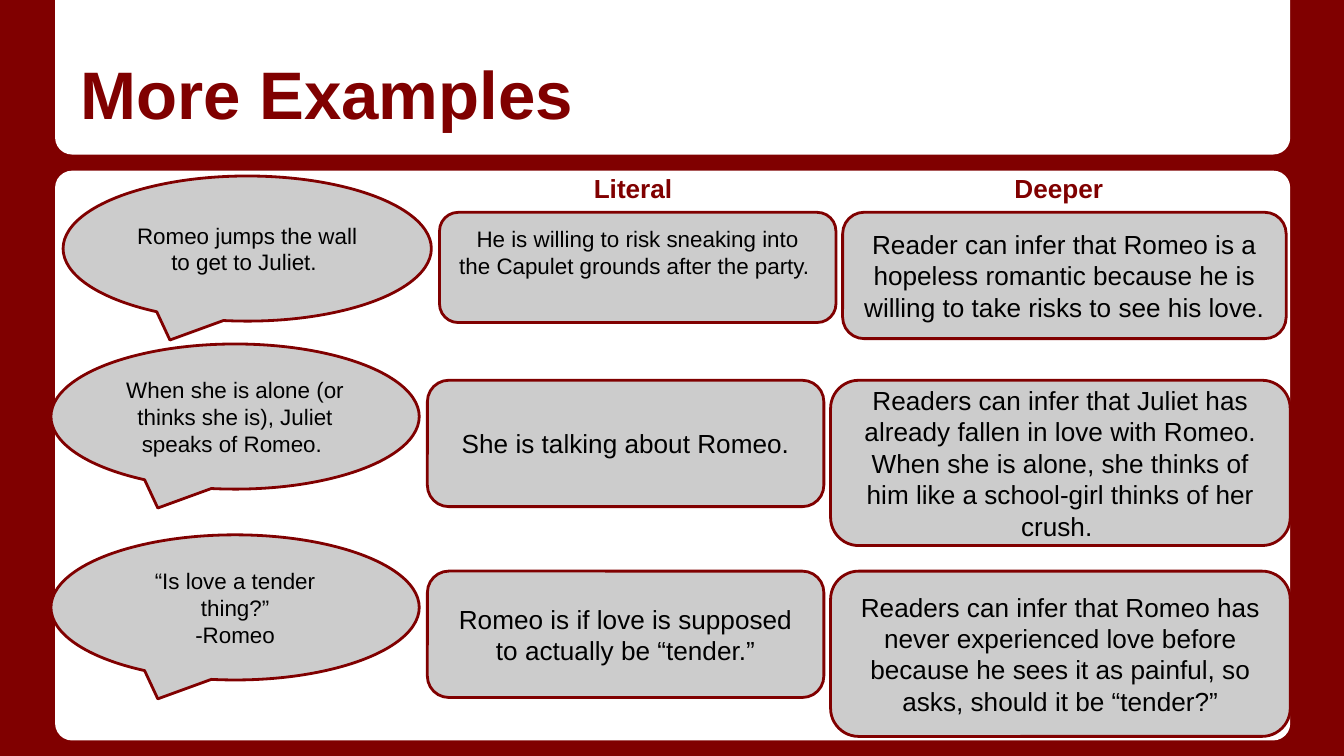
import pptx
import pptx.util
import pptx.dml.color
import pptx.enum.shapes
import pptx.enum.text

Inches = pptx.util.Inches
SHAPE = pptx.enum.shapes.MSO_SHAPE
ANCHOR = pptx.enum.text.MSO_ANCHOR
ALIGN = pptx.enum.text.PP_ALIGN

MAROON, GREY, WHITE, BLACK = "800000", "CCCCCC", "FFFFFF", "000000"

# left, top, quote, literal (text, height, size, bottom inset), deeper (text, width, height)
ROWS = [
    (0.47, 1.31, "Romeo jumps the wall to get to Juliet. ",
     ("He is willing to risk sneaking into the Capulet grounds after the party. ", 0.82, 12, 0.33),
     ("Reader can infer that Romeo is a hopeless romantic because he is willing "
      "to take risks to see his love.", 3.3, 0.94)),
    (0.38, 2.56, "When she is alone (or thinks she is), Juliet speaks of Romeo. ",
     ("She is talking about Romeo.", 0.94, 14, 0.1),
     ("Readers can infer that Juliet has already fallen in love with Romeo. When she is "
      "alone, she thinks of him like a school-girl thinks of her crush. ", 3.42, 1.23)),
    (0.38, 3.98, "“Is love a tender thing?”\n-Romeo",
     ("Romeo is if love is supposed to actually be “tender.”", 0.94, 14, 0.1),
     ("Readers can infer that Romeo has never experienced love before because he sees it "
      "as painful, so asks, should it be “tender?”", 3.42, 1.23)),
]


def rgb(value):
    return pptx.dml.color.RGBColor.from_string(value)


def write(sp, text, size=14, color=BLACK, bold=False, align=ALIGN.CENTER,
          anchor=ANCHOR.MIDDLE, bottom=0.1):
    tf = sp.text_frame
    tf.word_wrap = True
    tf.vertical_anchor = anchor
    tf.margin_left = tf.margin_right = tf.margin_top = Inches(0.1)
    tf.margin_bottom = Inches(bottom)
    for i, line in enumerate(text.split("\n")):
        p = tf.add_paragraph() if i else tf.paragraphs[0]
        p.alignment = align
        r = p.add_run()
        r.text = line
        r.font.name = "Arial"
        r.font.size = pptx.util.Pt(size)
        r.font.bold = bold
        r.font.color.rgb = rgb(color)


def add_shape(s, kind, box, fill, line=None, adjust=()):
    sp = s.shapes.add_shape(kind, *map(Inches, box))
    sp.shadow.inherit = False
    sp.fill.solid()
    sp.fill.fore_color.rgb = rgb(fill)
    if line:
        sp.line.color.rgb = rgb(line)
        sp.line.width = pptx.util.Pt(1.5)
    else:
        sp.line.fill.background()
    for i, value in enumerate(adjust):
        sp.adjustments[i] = value
    return sp


def add_label(s, text, box, **style):
    sp = s.shapes.add_textbox(*map(Inches, box))
    write(sp, text, color=MAROON, bold=True, align=ALIGN.LEFT, **style)


def add_frame(s, left, width):
    s.background.fill.solid()
    s.background.fill.fore_color.rgb = rgb(MAROON)
    add_shape(s, SHAPE.ROUNDED_RECTANGLE, (left, 1.27, width, 4.24), WHITE, adjust=[0.03])
    add_shape(s, SHAPE.ROUND_2_SAME_RECTANGLE, (left, 0, width, 1.15), WHITE, adjust=[0, 0.11])


def add_headings(s, top):
    add_label(s, "Literal", (4.32, top, 1.43, 0.45), anchor=ANCHOR.TOP)
    add_label(s, "Deeper", (7.45, top, 1.6, 0.45), anchor=ANCHOR.TOP)


def add_example(s, left, top, quote, literal, deeper):
    """Place a quote bubble with its literal and deeper readings to the right."""
    bubble = add_shape(s, SHAPE.OVAL_CALLOUT, (left, top, 2.74, 1.08), GREY, MAROON,
                       adjust=[-0.21, 0.63])
    write(bubble, quote, size=12)

    text, height, size, bottom = literal
    card = add_shape(s, SHAPE.ROUNDED_RECTANGLE, (left + 2.8, top + 0.27, 2.95, height),
                     GREY, MAROON, adjust=[0.17])
    write(card, text, size=size, bottom=bottom)

    text, width, height = deeper
    card = add_shape(s, SHAPE.ROUNDED_RECTANGLE, (left + 5.8, top + 0.27, width, height),
                     GREY, MAROON, adjust=[0.17])
    write(card, text)


def main():
    prs = pptx.Presentation()
    prs.slide_width = Inches(10)
    prs.slide_height = prs.slide_width * 9 // 16
    s = prs.slides.add_slide(prs.slide_layouts[6])
    add_frame(s, 0.41, 9.19)
    add_label(s, "More Examples", (0.5, 0.15, 9, 0.94), size=36, anchor=ANCHOR.BOTTOM)
    add_headings(s, 1.18)
    for row in ROWS:
        add_example(s, *row)
    prs.save("out.pptx")


if __name__ == "__main__":
    main()
